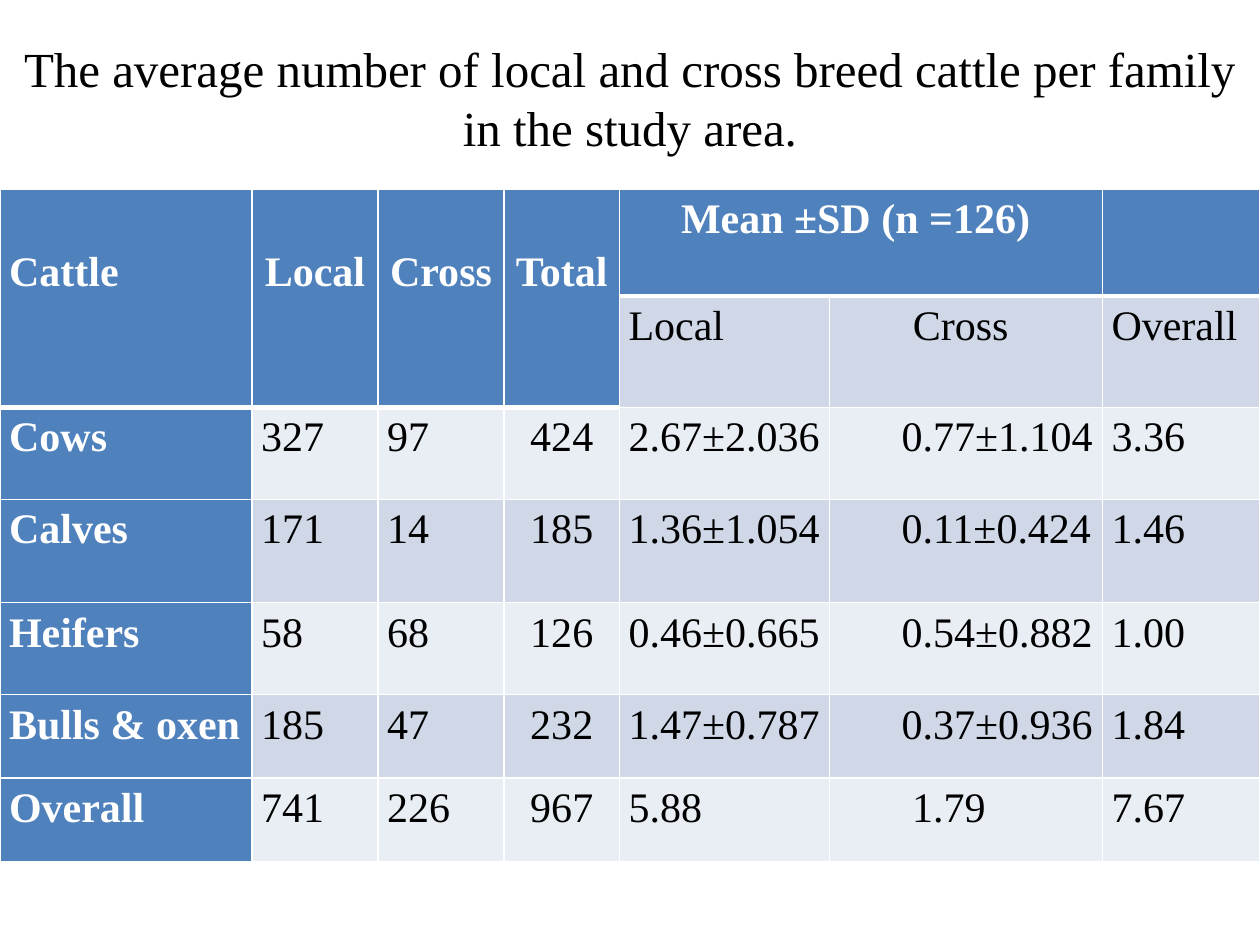
"""Build a slide with a table of average cattle numbers per family."""
from dataclasses import dataclass

from lxml import etree
from pptx import Presentation
from pptx.dml.color import RGBColor
from pptx.enum.text import MSO_ANCHOR, PP_ALIGN
from pptx.oxml.ns import qn
from pptx.util import Pt

LEFT, CENTER = PP_ALIGN.LEFT, PP_ALIGN.CENTER
MIDDLE = MSO_ANCHOR.MIDDLE
FONT = "Times New Roman"
BLUE, WHITE, BLACK = "4F81BD", "FFFFFF", "000000"
BANDS = ("E9EDF4", "D0D8E8")
MARGIN, HEADER_DROP = 5.2, 30.5
TITLE = "The average number of local and cross breed cattle per family in the study area."


@dataclass(frozen=True)
class Column:
    """Width, body alignment and body indent of a table column."""

    width: float
    align: PP_ALIGN = LEFT
    indent: float = 0


@dataclass(frozen=True)
class Row:
    """Height and cell texts of a table row."""

    height: float
    texts: tuple[str, ...]


COLUMNS = (
    Column(144), Column(72), Column(72), Column(66, CENTER),
    Column(120), Column(156, indent=36), Column(90),
)
ROWS = (
    Row(61.2, ("Cattle", "Local", "Cross", "Total", "Mean ±SD (n =126)", "", "")),
    Row(61.2, ("", "", "", "", "Local", "Cross", "Overall")),
    Row(52.6, ("Cows", "327", "97", "424", "2.67±2.036", "0.77±1.104", "3.36")),
    Row(59, ("Calves", "171", "14", "185", "1.36±1.054", "0.11±0.424", "1.46")),
    Row(52.6, ("Heifers", "58", "68", "126", "0.46±0.665", "0.54±0.882", "1.00")),
    Row(47.5, ("Bulls & oxen", "185", "47", "232", "1.47±0.787", "0.37±0.936", "1.84")),
    Row(48.2, ("Overall", "741", "226", "967", "5.88", "1.79", "7.67")),
)
MERGES = (*(((0, column), (1, column)) for column in range(4)), ((0, 4), (0, 5)))
HEADER_ALIGNS = {(0, column): CENTER for column in (1, 2, 3)} | {(1, 5): CENTER}
INDENTS = {(0, 4): 30, (1, 5): 0, (6, 5): 42}
RIGHT_INDENTS = {(1, 5): 6}


def color(value: str) -> RGBColor:
    """Turn a hex string into a colour."""
    return RGBColor.from_string(value)


def write(frame, text: str, *, size: float, fill: str, bold: bool = False,
          align: PP_ALIGN = LEFT, spacing: float = 1) -> None:
    """Write one formatted paragraph into a text frame."""
    para = frame.paragraphs[0]
    para.alignment, para.line_spacing = align, spacing
    span = para.add_run()
    span.text = text
    span.font.name, span.font.size, span.font.bold = FONT, Pt(size), bold
    span.font.color.rgb = color(fill)


def add_border(cell, side: str, weight: float) -> None:
    """Draw a white line along one side of a cell."""
    line = etree.SubElement(cell._tc.get_or_add_tcPr(), qn(f"a:ln{side}"), w=str(Pt(weight)))
    solid = etree.SubElement(line, qn("a:solidFill"))
    etree.SubElement(solid, qn("a:srgbClr"), val=WHITE)


def is_heading(row: int, column: int) -> bool:
    """Tell whether a cell lies in the blue two-level heading."""
    return row == 0 or (row == 1 and column < 4)


def format_cell(cell, row: int, column: int, text: str) -> None:
    """Set the borders, fill, margins and text of one table cell."""
    place = (row, column)
    blue = is_heading(row, column) or column == 0
    last_heading = 0 if column > 3 else 1
    weights = {"L": 1, "R": 1, "T": 3 if row == last_heading + 1 else 1,
               "B": 3 if row == last_heading else 1}
    for side, weight in weights.items():
        add_border(cell, side, weight)
    cell.fill.solid()
    cell.fill.fore_color.rgb = color(BLUE if blue else BANDS[row % 2])
    indent = INDENTS.get(place, COLUMNS[column].indent if row > 1 else 0)
    cell.margin_left = Pt(MARGIN + indent)
    cell.margin_right = Pt(MARGIN + RIGHT_INDENTS.get(place, 0))
    cell.margin_top = Pt(HEADER_DROP if row == 0 and column < 4 else 0)
    cell.margin_bottom = Pt(0)
    if text:
        align = COLUMNS[column].align if row > 1 else HEADER_ALIGNS.get(place, LEFT)
        write(cell.text_frame, text, size=24, fill=WHITE if blue else BLACK,
              bold=blue, align=align, spacing=1.15)


def add_title(page) -> None:
    """Add the centred title."""
    box = page.shapes.add_textbox(Pt(0), Pt(0), Pt(720), Pt(111.6))
    frame = box.text_frame
    frame.word_wrap, frame.vertical_anchor = True, MIDDLE
    write(frame, TITLE, size=28, fill=BLACK, align=CENTER)


def add_cattle_table(page) -> None:
    """Add the cattle table with its merged heading cells."""
    width = sum(column.width for column in COLUMNS)
    height = sum(row.height for row in ROWS)
    table = page.shapes.add_table(
        len(ROWS), len(COLUMNS), Pt(0), Pt(108), Pt(width), Pt(height)).table
    for index, column in enumerate(COLUMNS):
        table.columns[index].width = Pt(column.width)
    for first, last in MERGES:
        table.cell(*first).merge(table.cell(*last))
    for row_index, row in enumerate(ROWS):
        table.rows[row_index].height = Pt(row.height)
        for column_index, text in enumerate(row.texts):
            format_cell(table.cell(row_index, column_index), row_index, column_index, text)


def main() -> None:
    """Build and save the deck."""
    deck = Presentation()
    deck.slide_width, deck.slide_height = Pt(720), Pt(540)
    page = deck.slides.add_slide(deck.slide_layouts[6])
    add_title(page)
    add_cattle_table(page)
    deck.save("out.pptx")


if __name__ == "__main__":
    main()
